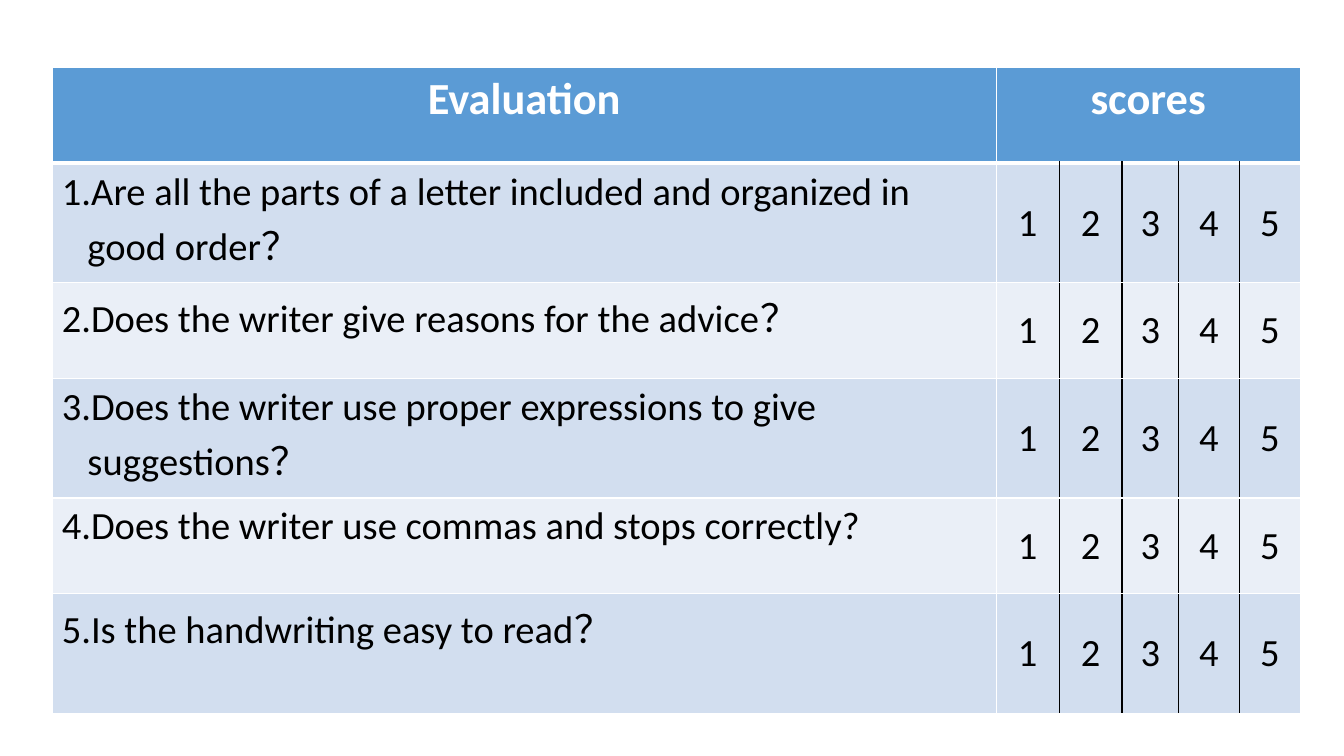
from lxml import etree
from pptx import Presentation
from pptx import util as u
from pptx.dml.color import RGBColor
from pptx.enum import text
from pptx.oxml import ns

# Content
HEADINGS = ["Evaluation", "scores"]
QUESTIONS = [
    ["1.Are all the parts of a letter included and organized in", "good order？"],
    ["2.Does the writer give reasons for the advice？"],
    ["3.Does the writer use proper expressions to give", "suggestions？"],
    ["4.Does the writer use commas and stops correctly?"],
    ["5.Is the handwriting easy to read？"],
]
SCORES = ["1", "2", "3", "4", "5"]

# Layout and style
COLUMN_WIDTHS = [8.85, 0.59, 0.59, 0.53, 0.57, 0.57]
ROW_HEIGHTS = [0.9, 1.12, 0.9, 1.12, 0.9, 1.12]
LEFT, TOP = 0.49, 0.63
HANGING_INDENT = 0.24
FONT = "Calibri"
COLORS = {
    "header": "5B9BD5",
    "odd": "D2DEEF",
    "even": "EAEFF7",
    "white": "FFFFFF",
    "black": "000000",
}


def set_borders(cell, row, column):
    """White rules all round, black ones between the scores."""
    last = len(SCORES)
    left = "black" if row and column > 1 else "white"
    right = "black" if row and 0 < column < last else "white"
    edges = [
        ("a:lnL", left, 1),
        ("a:lnR", right, 1),
        ("a:lnT", "white", 3 if row == 1 else 1),
        ("a:lnB", "white", 3 if row == 0 else 1),
    ]
    properties = cell._tc.get_or_add_tcPr()
    for tag, color, points in edges:
        line = etree.SubElement(properties, ns.qn(tag), w=str(u.Pt(points)))
        fill = etree.SubElement(line, ns.qn("a:solidFill"))
        etree.SubElement(fill, ns.qn("a:srgbClr"), val=COLORS[color])


def write(cell, lines, size, color, bold=False, centred=False):
    frame = cell.text_frame
    for number, line in enumerate(lines):
        para = frame.add_paragraph() if number else frame.paragraphs[0]
        if number:
            para._p.get_or_add_pPr().set("marL", str(u.Inches(HANGING_INDENT)))
        para.alignment = text.PP_ALIGN.CENTER if centred else text.PP_ALIGN.LEFT
        span = para.add_run()
        span.text = line
        span.font.name = FONT
        span.font.size = u.Pt(size)
        span.font.bold = bold
        span.font.color.rgb = RGBColor.from_string(COLORS[color])


def main():
    deck = Presentation()
    deck.slide_width, deck.slide_height = u.Inches(12.6), u.Inches(7.09)
    page = deck.slides.add_slide(deck.slide_layouts[6])

    # Table grid
    frame = page.shapes.add_table(
        len(ROW_HEIGHTS), len(COLUMN_WIDTHS), u.Inches(LEFT), u.Inches(TOP),
        u.Inches(sum(COLUMN_WIDTHS)), u.Inches(sum(ROW_HEIGHTS)))
    table = frame.table
    for column, width in zip(table.columns, COLUMN_WIDTHS):
        column.width = u.Inches(width)
    for row, height in zip(table.rows, ROW_HEIGHTS):
        row.height = u.Inches(height)

    # Borders and banded fills
    for r in range(len(ROW_HEIGHTS)):
        band = "header" if r == 0 else "odd" if r % 2 else "even"
        for c in range(len(COLUMN_WIDTHS)):
            cell = table.cell(r, c)
            set_borders(cell, r, c)
            cell.fill.solid()
            cell.fill.fore_color.rgb = RGBColor.from_string(COLORS[band])
            cell.margin_left = cell.margin_right = u.Inches(0.09)
            cell.margin_top = cell.margin_bottom = u.Inches(0.05)

    # Header row
    table.cell(0, 1).merge(table.cell(0, len(SCORES)))
    for c, heading in enumerate(HEADINGS):
        write(table.cell(0, c), [heading], 30, "white", bold=True, centred=True)

    # Questions with their score scale
    for r, question in enumerate(QUESTIONS, 1):
        write(table.cell(r, 0), question, 26, "black")
        for c, score in enumerate(SCORES, 1):
            cell = table.cell(r, c)
            cell.vertical_anchor = text.MSO_ANCHOR.MIDDLE
            write(cell, [score], 26, "black", centred=True)

    deck.save("out.pptx")


if __name__ == "__main__":
    main()
